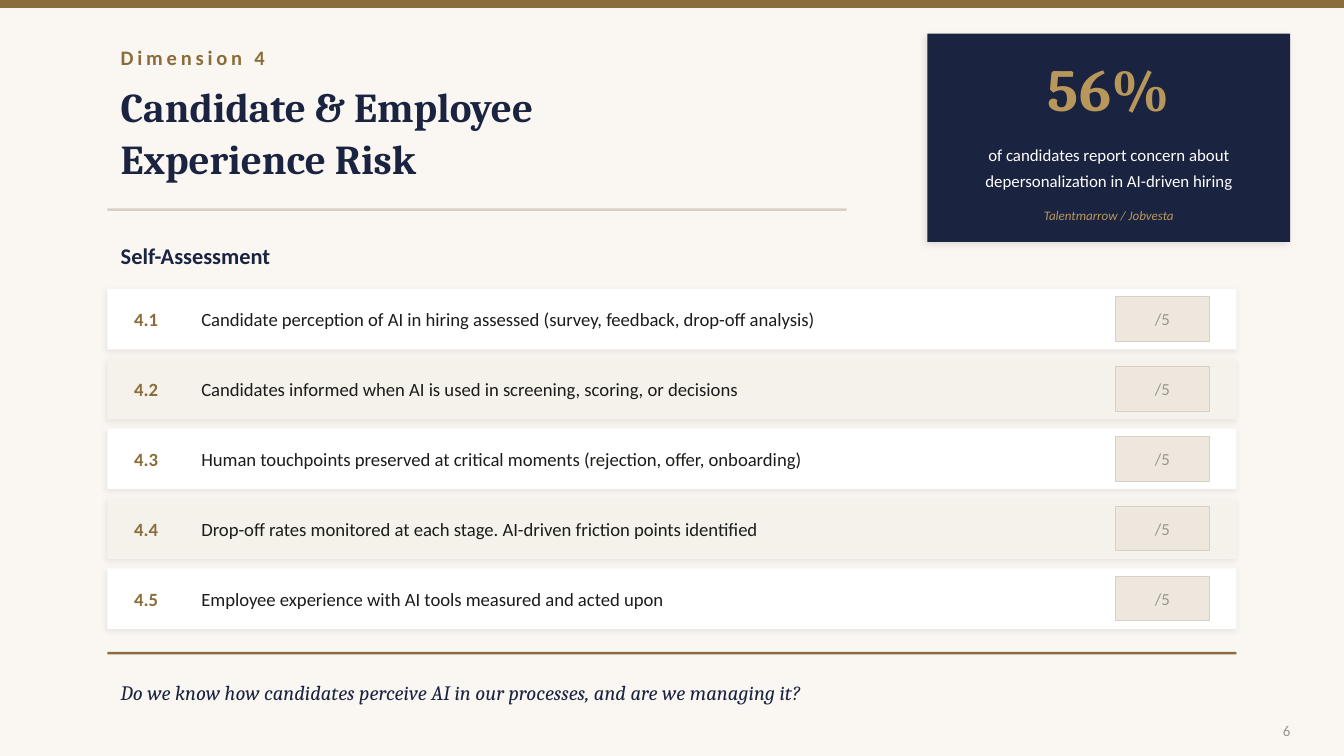
"""Build the self-assessment slide on candidate and employee experience risk."""
import pptx
import pptx.dml.color
import pptx.enum.shapes
import pptx.enum.text
import pptx.oxml
import pptx.oxml.ns
import pptx.util

Pt = pptx.util.Pt
RGBColor = pptx.dml.color.RGBColor
ALIGN = pptx.enum.text.PP_ALIGN
ANCHOR = pptx.enum.text.MSO_ANCHOR

CREAM = RGBColor(0xFA, 0xF7, 0xF2)
BRONZE = RGBColor(0x8A, 0x6D, 0x3B)
GOLD = RGBColor(0xB8, 0x97, 0x5A)
NAVY = RGBColor(0x1A, 0x23, 0x40)
WHITE = RGBColor(0xFF, 0xFF, 0xFF)
SAND = RGBColor(0xF5, 0xF1, 0xEB)
BEIGE = RGBColor(0xED, 0xE7, 0xDD)
STONE = RGBColor(0xD8, 0xD0, 0xC4)
INK = RGBColor(0x1C, 0x1C, 0x1A)
GRAY = RGBColor(0x9A, 0x94, 0x90)

DIMENSION = 4
TITLE = ["Candidate & Employee", "Experience Risk"]
STATISTIC = "56%"
STATISTIC_NOTE = ["of candidates report concern about", "depersonalization in AI-driven hiring"]
STATISTIC_SOURCE = "Talentmarrow / Jobvesta"
CRITERIA = [
    "Candidate perception of AI in hiring assessed (survey, feedback, drop-off analysis)",
    "Candidates informed when AI is used in screening, scoring, or decisions",
    "Human touchpoints preserved at critical moments (rejection, offer, onboarding)",
    "Drop-off rates monitored at each stage. AI-driven friction points identified",
    "Employee experience with AI tools measured and acted upon",
]
QUESTION = "Do we know how candidates perceive AI in our processes, and are we managing it?"
PAGE_NUMBER = "6"

SLIDE_WIDTH, SLIDE_HEIGHT = 720, 405
MARGIN = 57.6
CONTENT_WIDTH = SLIDE_WIDTH - 2 * MARGIN
TITLE_WIDTH = 396
CARD_LEFT, CARD_TOP, CARD_WIDTH, CARD_HEIGHT = 496.8, 18, 194.4, 111.6
ROW_TOP, ROW_HEIGHT, ROW_PITCH = 154.8, 32.4, 37.44
SCORE_LEFT, SCORE_WIDTH, SCORE_INSET = 597.6, 50.4, 4.32


def add_shadow(shape, blur, distance, opacity):
    effects = pptx.oxml.parse_xml(
        f'<a:effectLst {pptx.oxml.ns.nsdecls("a")}>'
        f'<a:outerShdw blurRad="{Pt(blur)}" dist="{Pt(distance)}" dir="8100000" '
        'algn="bl" rotWithShape="0"><a:srgbClr val="000000">'
        f'<a:alpha val="{opacity * 1000}"/></a:srgbClr></a:outerShdw></a:effectLst>'
    )
    properties = shape._element.spPr
    properties.remove(properties.find(pptx.oxml.ns.qn("a:effectLst")))
    properties.append(effects)


def add_panel(slide, left, top, width, height, fill, line=None, shadow=None):
    shape = slide.shapes.add_shape(
        pptx.enum.shapes.MSO_SHAPE.RECTANGLE, Pt(left), Pt(top), Pt(width), Pt(height)
    )
    shape.fill.solid()
    shape.fill.fore_color.rgb = fill
    if line is None:
        shape.line.fill.background()
    else:
        shape.line.color.rgb = line
        shape.line.width = Pt(0.5)
    shape.shadow.inherit = False
    if shadow:
        add_shadow(shape, *shadow)


def add_text(slide, left, top, width, height, lines, size, color, font="Calibri", bold=False,
             italic=False, align=ALIGN.LEFT, anchor=ANCHOR.MIDDLE, line_spacing=None, tracking=None):
    box = slide.shapes.add_textbox(Pt(left), Pt(top), Pt(width), Pt(height))
    frame = box.text_frame
    frame.word_wrap = True
    frame.vertical_anchor = anchor
    frame.text = lines if isinstance(lines, str) else "\n".join(lines)
    for paragraph in frame.paragraphs:
        paragraph.alignment = align
        paragraph.line_spacing = line_spacing
        for run in paragraph.runs:
            run.font.size = Pt(size)
            run.font.name = font
            run.font.color.rgb = color
            run.font.bold = bold
            run.font.italic = italic
            if tracking:
                run._r.get_or_add_rPr().set("spc", str(tracking * 100))


def add_heading(slide):
    add_panel(slide, 0, 0, SLIDE_WIDTH, 4.32, BRONZE)
    add_text(slide, MARGIN, 18, 288, 25.2, f"Dimension {DIMENSION}", 11, BRONZE, bold=True, tracking=2)
    add_text(slide, MARGIN, 39.6, TITLE_WIDTH, 61.2, TITLE, 22, NAVY, "Cambria", bold=True,
             line_spacing=1.05)
    add_panel(slide, MARGIN, 111.6, TITLE_WIDTH, 1.44, STONE)


def add_statistic(slide):
    note_left, note_width = CARD_LEFT + 7.2, 180
    add_panel(slide, CARD_LEFT, CARD_TOP, CARD_WIDTH, CARD_HEIGHT, NAVY, shadow=(4, 2, 10))
    add_text(slide, CARD_LEFT, 21.6, CARD_WIDTH, 50.4, STATISTIC, 32, GOLD, "Cambria", bold=True,
             align=ALIGN.CENTER)
    add_text(slide, note_left, 68.4, note_width, 39.6, STATISTIC_NOTE, 9, WHITE,
             align=ALIGN.CENTER, line_spacing=1.3)
    add_text(slide, note_left, 108, note_width, 14.4, STATISTIC_SOURCE, 7, GOLD, italic=True,
             align=ALIGN.CENTER)


def add_assessment(slide):
    add_text(slide, MARGIN, 126, 288, 21.6, "Self-Assessment", 12, NAVY, bold=True)
    for index, criterion in enumerate(CRITERIA):
        top = ROW_TOP + index * ROW_PITCH
        score_area = (SCORE_LEFT, top + SCORE_INSET, SCORE_WIDTH, ROW_HEIGHT - 2 * SCORE_INSET)
        add_panel(slide, MARGIN, top, CONTENT_WIDTH, ROW_HEIGHT, SAND if index % 2 else WHITE,
                  shadow=(3, 1, 8))
        add_text(slide, 64.8, top, 32.4, ROW_HEIGHT, f"{DIMENSION}.{index + 1}", 10, BRONZE, bold=True)
        add_text(slide, 100.8, top, 475.2, ROW_HEIGHT, criterion, 10, INK)
        add_panel(slide, *score_area, BEIGE, line=STONE)
        add_text(slide, *score_area, "/5", 9, GRAY, align=ALIGN.CENTER)


def add_closing(slide):
    add_panel(slide, MARGIN, 349.2, CONTENT_WIDTH, 1.44, BRONZE)
    add_text(slide, MARGIN, 356.4, CONTENT_WIDTH, 28.8, QUESTION, 11, NAVY, "Cambria", italic=True)
    add_text(slide, 662.4, 378, 36, 21.6, PAGE_NUMBER, 8, GRAY, align=ALIGN.RIGHT, anchor=ANCHOR.BOTTOM)


def main():
    presentation = pptx.Presentation()
    presentation.slide_width = Pt(SLIDE_WIDTH)
    presentation.slide_height = Pt(SLIDE_HEIGHT)
    slide = presentation.slides.add_slide(presentation.slide_layouts[6])
    slide.background.fill.solid()
    slide.background.fill.fore_color.rgb = CREAM
    add_heading(slide)
    add_statistic(slide)
    add_assessment(slide)
    add_closing(slide)
    presentation.save("out.pptx")


if __name__ == "__main__":
    main()
